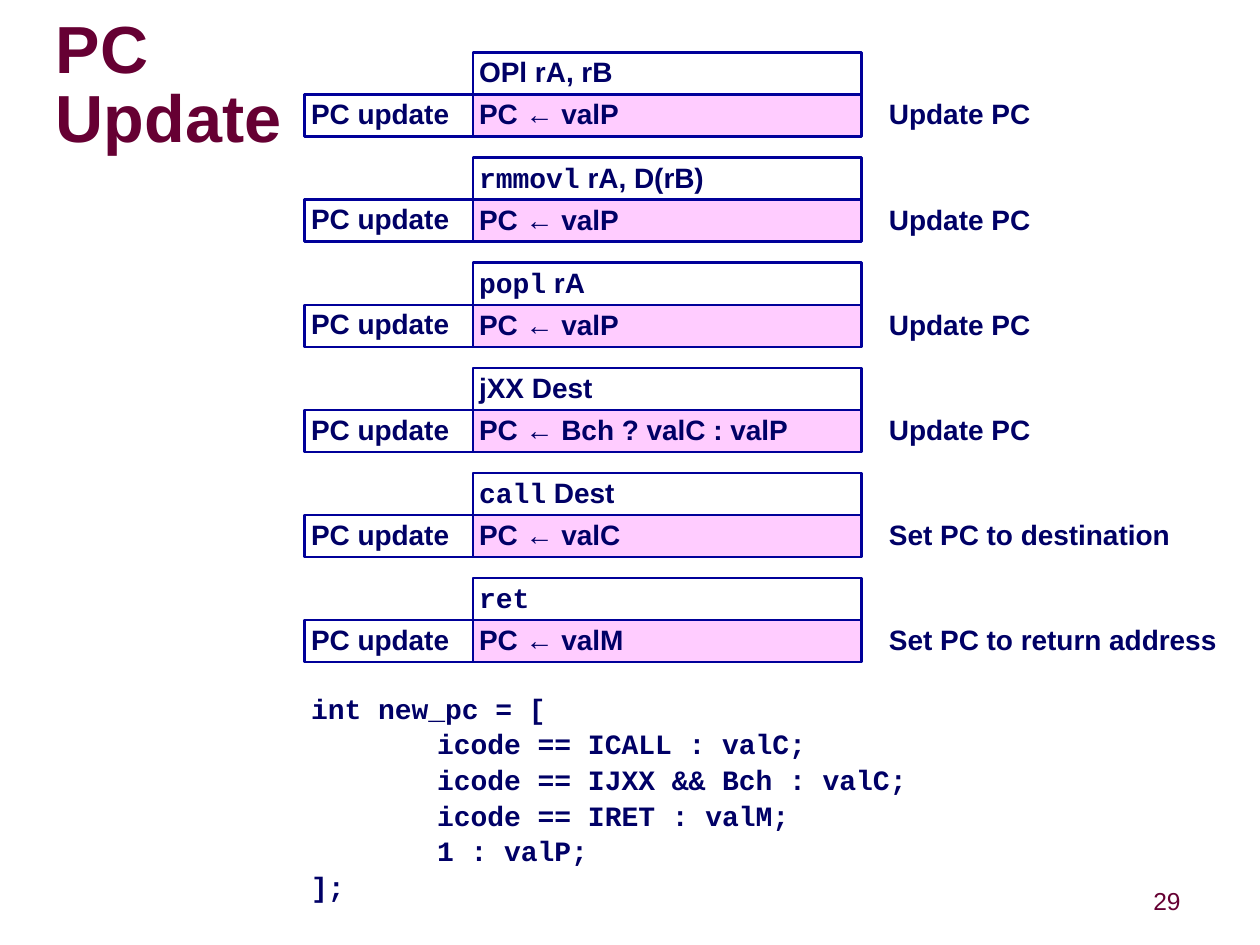
import pptx
import pptx.util
import pptx.dml.color
import pptx.enum.shapes
import pptx.enum.text

PX = 7620  # EMU per px, 120 px to the inch
COLORS = {
    "paper": "FFFFFF",
    "maroon": "660033",
    "navy": "000066",
    "border": "000099",
    "pink": "FFCCFF",
}
SANS, MONO = "Arial", "Courier New"
LABEL_X, CELL_X, NOTE_X = 290, 450, 840
LABEL_WIDTH, CELL_WIDTH = 160, 370
FIRST_Y, ROW_HEIGHT, PITCH = 50, 40, 100

# Instruction as (text, font) spans, PC update step, explanation
INSTRUCTIONS = [
    ([("OPl rA, rB", SANS)], "PC ← valP", "Update PC"),
    ([("rmmovl", MONO), (" rA, D(rB)", SANS)], "PC ← valP", "Update PC"),
    ([("popl", MONO), (" rA", SANS)], "PC ← valP", "Update PC"),
    ([("jXX Dest", SANS)], "PC ← Bch ? valC : valP", "Update PC"),
    ([("call", MONO), (" Dest", SANS)], "PC ← valC", "Set PC to destination"),
    ([("ret", MONO)], "PC ← valM", "Set PC to return address"),
]

# Code lines with their indent in px
CODE = [
    ("int new_pc = [", 0),
    ("icode == ICALL : valC;", 120),
    ("icode == IJXX && Bch : valC;", 120),
    ("icode == IRET : valM;", 120),
    ("1 : valP;", 120),
    ("];", 0),
]


def rgb(name):
    return pptx.dml.color.RGBColor.from_string(COLORS[name])


def write(para, text, font=SANS, size=16, color="navy", bold=True,
          spacing=0.9, indent=0):
    """Add one formatted span to a paragraph."""
    para.line_spacing = spacing
    if indent:
        para._p.get_or_add_pPr().set("marL", str(indent * PX))
    span = para.add_run()
    span.text = text
    span.font.name = font
    span.font.size = pptx.util.Pt(size)
    span.font.bold = bold
    span.font.color.rgb = rgb(color)


def set_frame(box, inset=6, middle=False, wrap=True):
    """Set margins and anchor, and return the first paragraph."""
    frame = box.text_frame
    frame.word_wrap = wrap
    frame.margin_left = frame.margin_right = inset * PX
    frame.margin_top = frame.margin_bottom = inset * PX
    anchors = pptx.enum.text.MSO_ANCHOR
    frame.vertical_anchor = anchors.MIDDLE if middle else anchors.TOP
    para = frame.paragraphs[0]
    para.alignment = pptx.enum.text.PP_ALIGN.LEFT
    return para


def add_text(page, x, y, width, height, **layout):
    box = page.shapes.add_textbox(x * PX, y * PX, width * PX, height * PX)
    return box, set_frame(box, **layout)


def add_cell(page, x, y, width, fill=None, middle=False):
    """Add a bordered rectangle and return its paragraph."""
    box = page.shapes.add_shape(
        pptx.enum.shapes.MSO_SHAPE.RECTANGLE,
        x * PX, y * PX, width * PX, ROW_HEIGHT * PX)
    box.shadow.inherit = False
    if fill:
        box.fill.solid()
        box.fill.fore_color.rgb = rgb(fill)
    else:
        box.fill.background()
    box.line.color.rgb = rgb("border")
    box.line.width = pptx.util.Pt(1.5)
    return set_frame(box, middle=middle)


def add_instruction(page, y, spans, step, note):
    """Add the instruction, its PC update row and the explanation."""
    para = add_cell(page, CELL_X, y, CELL_WIDTH)
    for text, font in spans:
        write(para, text, font=font)
    y += ROW_HEIGHT
    write(add_cell(page, CELL_X, y, CELL_WIDTH, fill="pink"), step)
    write(add_cell(page, LABEL_X, y, LABEL_WIDTH, middle=True), "PC update")
    write(add_text(page, NOTE_X, y, CELL_WIDTH, ROW_HEIGHT)[1], note)


def add_code(page):
    box, para = add_text(page, LABEL_X, 650, 700, 204)
    for number, (line, indent) in enumerate(CODE):
        if number:
            para = box.text_frame.add_paragraph()
        write(para, line, font=MONO, spacing=1.06, indent=indent)


def main():
    deck = pptx.Presentation()
    deck.slide_width, deck.slide_height = 1199 * PX, 899 * PX
    page = deck.slides.add_slide(deck.slide_layouts[6])
    page.background.fill.solid()
    page.background.fill.fore_color.rgb = rgb("paper")

    # Title
    para = add_text(page, 53, 32, 1142, 102, inset=0, middle=True)[1]
    title = {"size": 38, "color": "maroon", "spacing": 0.87}
    write(para, "PC", **title)
    para.add_line_break()
    write(para, "Update", **title)

    # Instructions
    for number, (spans, step, note) in enumerate(INSTRUCTIONS):
        add_instruction(page, FIRST_Y + number * PITCH, spans, step, note)

    # Code
    add_code(page)

    # Page number
    para = add_text(page, 1090, 840, 41, 37, middle=True, wrap=False)[1]
    para.alignment = pptx.enum.text.PP_ALIGN.CENTER
    write(para, "29", size=14, color="maroon", bold=False)

    deck.save("out.pptx")


if __name__ == "__main__":
    main()
